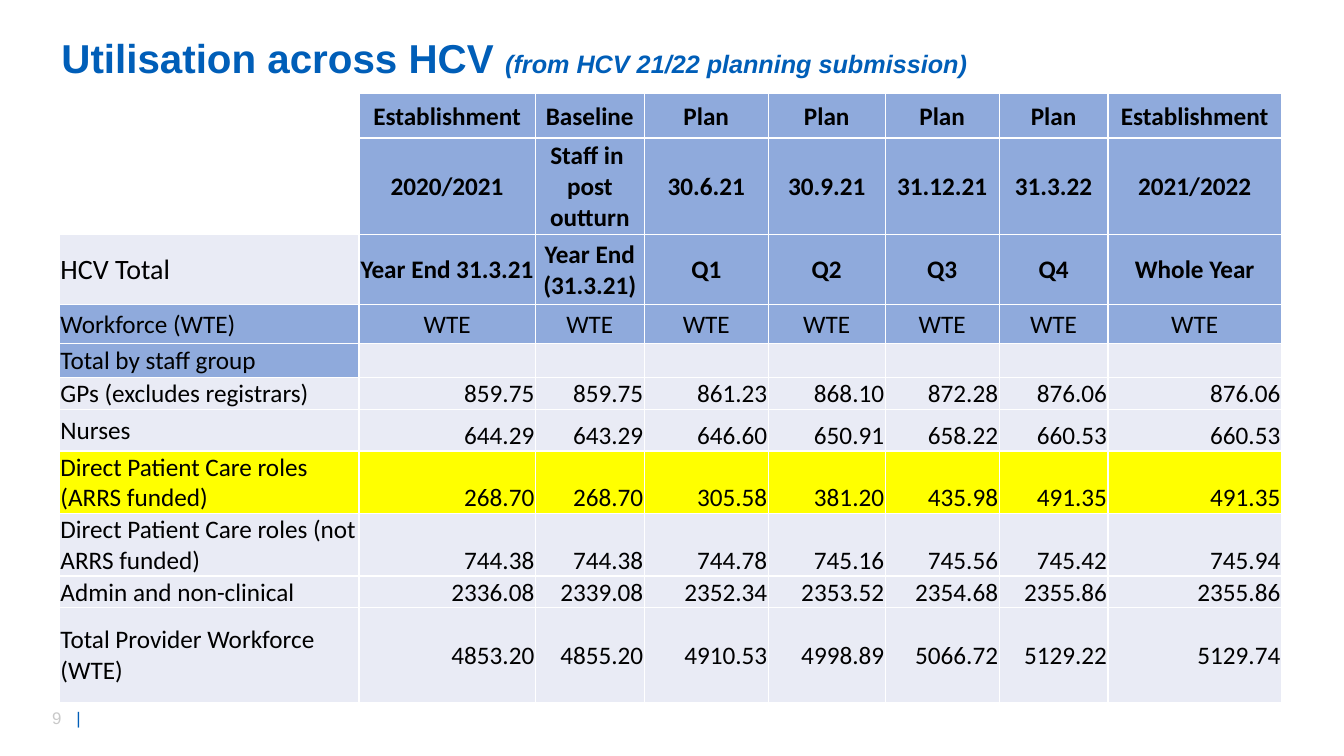
from lxml import etree
from pptx import Presentation, util as u
from pptx.dml.color import RGBColor
from pptx.enum import text as t
from pptx.oxml import ns

BLUE = RGBColor(0x00, 0x5E, 0xB8)
HEAD = RGBColor(0x8F, 0xAA, 0xDC)
PALE = RGBColor(0xE9, 0xEB, 0xF5)
YELLOW = RGBColor(0xFF, 0xFF, 0x00)
WHITE = RGBColor(0xFF, 0xFF, 0xFF)
BLACK = RGBColor(0, 0, 0)
GREY = RGBColor(0xC9, 0xC9, 0xC9)
LEFT, MID, RIGHT = t.PP_ALIGN.LEFT, t.PP_ALIGN.CENTER, t.PP_ALIGN.RIGHT
TOP, CENTRE, BASE = t.MSO_ANCHOR.TOP, t.MSO_ANCHOR.MIDDLE, t.MSO_ANCHOR.BOTTOM
UNIT = u.Inches(0.01)  # grid step: 1333 columns by 750 rows


def write(para, words, size=18, face="Calibri", color=BLACK,
          bold=False, italic=False, align=LEFT):
    para.alignment = align
    run = para.add_run()
    run.text = words
    font = run.font
    font.size, font.name = u.Pt(size), face
    font.bold, font.italic = bold, italic
    font.color.rgb = color


def edge(cell):
    """Draw a thin white line on each side of a cell."""
    props = cell._tc.get_or_add_tcPr()
    for side in ("lnL", "lnR", "lnT", "lnB"):
        line = etree.SubElement(props, ns.qn("a:" + side), w=str(u.Pt(1)))
        fill = etree.SubElement(line, ns.qn("a:solidFill"))
        etree.SubElement(fill, ns.qn("a:srgbClr"), val=str(WHITE))


deck = Presentation()
deck.slide_width, deck.slide_height = 1333 * UNIT, 750 * UNIT
slide = deck.slides.add_slide(deck.slide_layouts[5])

# Title
title = slide.shapes.title
title.left, title.top = 51 * UNIT, 26 * UNIT
title.width, title.height = 958 * UNIT, 67 * UNIT
frame = title.text_frame
frame.auto_size = t.MSO_AUTO_SIZE.NONE
frame.word_wrap = True
frame.vertical_anchor = CENTRE
para = frame.paragraphs[0]
para.line_spacing = 0.9
look = dict(face="Arial", color=BLUE, bold=True)
write(para, "Utilisation across HCV ", size=28.8, **look)
write(para, "(from HCV 21/22 planning submission)", italic=True, **look)

# Workforce table
COLS = [297, 175, 108, 123, 116, 113, 108, 172]
ROWS = [44, 96, 69, 39, 34, 31, 41, 61, 61, 31, 94]
DATA = [
    ["", "Establishment", "Baseline", "Plan", "Plan", "Plan", "Plan", "Establishment"],
    ["", "2020/2021", "Staff in \npost outturn", "30.6.21", "30.9.21", "31.12.21",
     "31.3.22", "2021/2022"],
    ["HCV Total", "Year End 31.3.21", "Year End (31.3.21)", "Q1", "Q2", "Q3", "Q4",
     "Whole Year"],
    ["Workforce (WTE)"] + ["WTE"] * 7,
    ["Total by staff group"] + [""] * 7,
    ["GPs (excludes registrars)", "859.75", "859.75", "861.23", "868.10", "872.28",
     "876.06", "876.06"],
    ["Nurses", "644.29", "643.29", "646.60", "650.91", "658.22", "660.53", "660.53"],
    ["Direct Patient Care roles (ARRS funded)", "268.70", "268.70", "305.58",
     "381.20", "435.98", "491.35", "491.35"],
    ["Direct Patient Care roles (not ARRS funded)", "744.38", "744.38", "744.78",
     "745.16", "745.56", "745.42", "745.94"],
    ["Admin and non-clinical", "2336.08", "2339.08", "2352.34", "2353.52",
     "2354.68", "2355.86", "2355.86"],
    ["Total Provider Workforce (WTE)", "4853.20", "4855.20", "4910.53", "4998.89",
     "5066.72", "5129.22", "5129.74"],
]
HEADS, UNITS, GROUP, DOCTORS, FUNDED, TOTAL = 3, 3, 4, 5, 7, 10

grid = slide.shapes.add_table(len(ROWS), len(COLS), 59 * UNIT, 93 * UNIT,
                              sum(COLS) * UNIT, sum(ROWS) * UNIT).table
for col, wide in zip(grid.columns, COLS):
    col.width = wide * UNIT
for row, high in zip(grid.rows, ROWS):
    row.height = high * UNIT

for r, row in enumerate(DATA):
    for c, words in enumerate(row):
        cell = grid.cell(r, c)
        edge(cell)
        label = c == 0
        if label and r < 2:
            shade = WHITE
        elif r == FUNDED:
            shade = YELLOW
        elif (r < HEADS and not label) or r == UNITS or (r == GROUP and label):
            shade = HEAD
        else:
            shade = PALE
        cell.fill.solid()
        cell.fill.fore_color.rgb = shade

        cell.margin_left = cell.margin_right = cell.margin_top = UNIT
        cell.margin_bottom = 0
        if r == DOCTORS:
            cell.vertical_anchor = BASE if label else TOP
        elif label or r < DOCTORS or r == TOTAL:
            cell.vertical_anchor = CENTRE
        else:
            cell.vertical_anchor = BASE

        align = LEFT if label else MID if r <= UNITS else RIGHT
        for n, part in enumerate(words.split("\n") if words else []):
            frame = cell.text_frame
            para = frame.add_paragraph() if n else frame.paragraphs[0]
            write(para, part, size=20 if label and r == 2 else 18,
                  bold=r < HEADS and not label, align=align)
grid.cell(0, 0).merge(grid.cell(1, 0))

# Page number
foot = slide.shapes.add_textbox(42 * UNIT, 697 * UNIT, 94 * UNIT, 30 * UNIT)
foot.text_frame.word_wrap = True
para = foot.text_frame.paragraphs[0]
tabs = etree.SubElement(para._p.get_or_add_pPr(), ns.qn("a:tabLst"))
etree.SubElement(tabs, ns.qn("a:tab"), pos=str(24 * UNIT), algn="l")
write(para, "9\t", size=12, face="Arial", color=GREY)
write(para, "|", size=12, face="Arial", color=BLUE)

deck.save("out.pptx")
